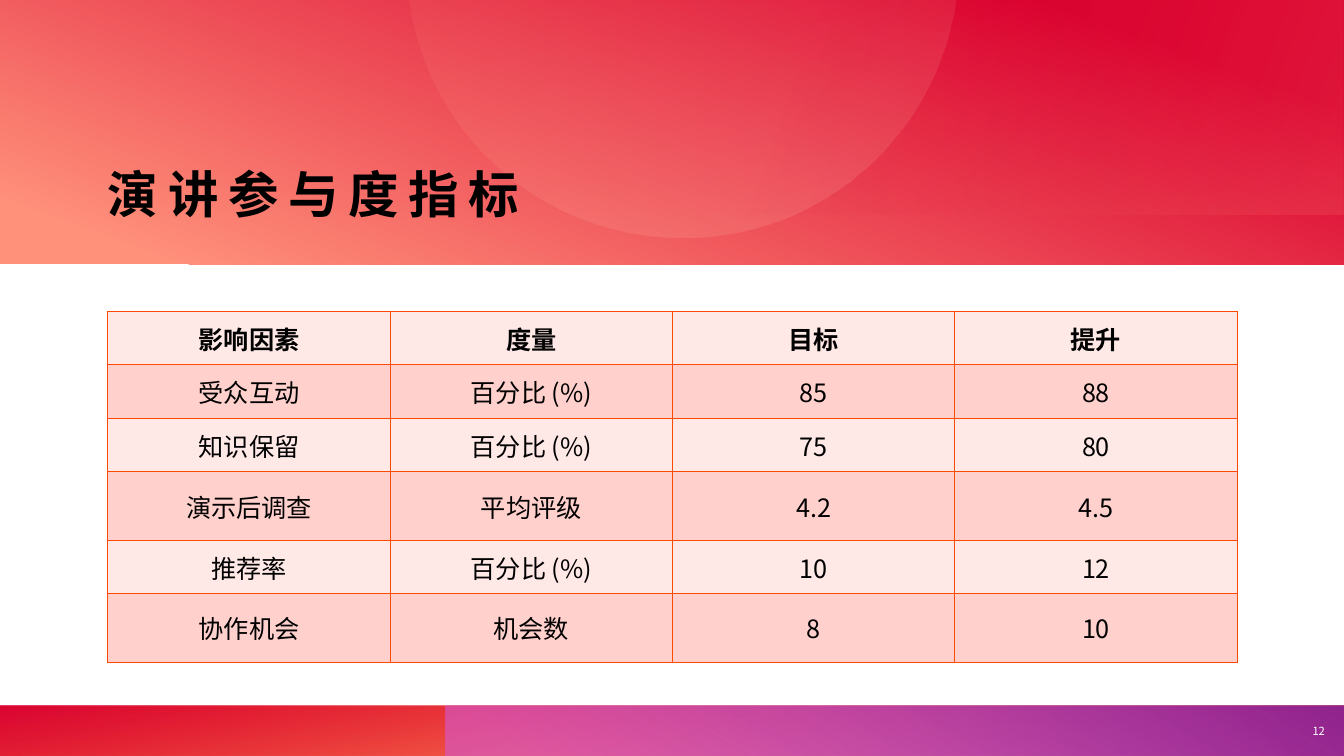
import math
from dataclasses import dataclass

import pptx
import pptx.dml.color
import pptx.enum.shapes
import pptx.enum.text
import pptx.oxml
import pptx.oxml.ns
import pptx.util
from pptx.util import Inches

Align = pptx.enum.text.PP_ALIGN
Anchor = pptx.enum.text.MSO_ANCHOR
Color = pptx.dml.color.RGBColor
qn = pptx.oxml.ns.qn


@dataclass(frozen=True)
class Theme:
    font: str = "Noto Sans CJK SC"
    text: str = "000000"
    white: str = "FFFFFF"
    orange: str = "FE4A00"
    coral: str = "FF907A"
    blush: str = "FFBCAF"
    red: str = "DA002F"
    pink: str = "D861D4"
    purple: str = "92248E"
    row_fills: tuple[str, str] = ("FFE9E7", "FFD0CC")
    title_size: float = 36
    table_size: float = 18
    number_size: float = 8
    title_spacing: float = 7


@dataclass(frozen=True)
class Stop:
    position: int
    color: str
    opacity: int = 100


@dataclass(frozen=True)
class Gradient:
    start: Stop
    end: Stop
    angle: int  # clockwise degrees


@dataclass(frozen=True)
class Band:
    left: float
    top: float
    width: float
    height: float
    gradient: Gradient
    turned: bool = False


THEME = Theme()
WIDTH, HEIGHT = 13.33, 7.5
MARGIN, CONTENT_WIDTH = 1.07, 11.2

RED_FOOTER = Gradient(Stop(14, THEME.orange, 28), Stop(100, THEME.red, 85), 100)
PURPLE_FOOTER = Gradient(Stop(9, THEME.pink, 55), Stop(99, THEME.purple), 240)
HEADER = Gradient(Stop(8, THEME.coral), Stop(86, THEME.red), 70)
DISC = Gradient(Stop(0, THEME.coral, 12), Stop(100, THEME.blush, 20), 77)
GLOW = Gradient(Stop(0, THEME.coral, 16), Stop(62, THEME.red, 0), 340)

FOOTER_BANDS = [
    band
    for top in (7, 7.01)
    for band in (
        Band(0, top, WIDTH, 0.5, RED_FOOTER, turned=True),
        Band(4.42, top, 8.92, 0.5, PURPLE_FOOTER),
    )
]
HEADER_BAND = Band(0, 0, WIDTH, 2.62, HEADER, turned=True)
GLOW_BAND = Band(4.44, 0, 8.88, 2.13, GLOW)

ROWS = [
    ("影响因素", "度量", "目标", "提升"),
    ("受众互动", "百分比 (%)", "85", "88"),
    ("知识保留", "百分比 (%)", "75", "80"),
    ("演示后调查", "平均评级", "4.2", "4.5"),
    ("推荐率", "百分比 (%)", "10", "12"),
    ("协作机会", "机会数", "8", "10"),
]
ROW_HEIGHTS = [0.53, 0.53, 0.53, 0.68, 0.53, 0.68]


def paint_gradient(shape, gradient: Gradient) -> None:
    shape.shadow.inherit = False
    shape.line.fill.background()
    shape.fill.gradient()
    shape.fill.gradient_angle = 360 - gradient.angle
    for target, stop in zip(shape.fill.gradient_stops, (gradient.start, gradient.end)):
        target.position = stop.position / 100
        target.color.rgb = Color.from_string(stop.color)
    colors = shape._element.spPr.iter(qn("a:srgbClr"))
    for color, stop in zip(colors, (gradient.start, gradient.end)):
        alpha = pptx.oxml.parse_xml(
            f'<a:alpha {pptx.oxml.ns.nsdecls("a")} val="{stop.opacity * 1000}"/>'
        )
        color.append(alpha)


def draw_band(page, band: Band) -> None:
    box = page.shapes.add_shape(
        pptx.enum.shapes.MSO_SHAPE.RECTANGLE,
        Inches(band.left), Inches(band.top), Inches(band.width), Inches(band.height),
    )
    paint_gradient(box, band.gradient)
    box._element.spPr.xfrm.set("flipH", "1")
    if band.turned:
        box.rotation = 180


def draw_disc(page) -> None:
    """Draw the part of a circle that hangs below the top edge."""
    center_x, center_y, radius = 6.77, -0.37, 2.73
    edge = math.asin(-center_y / radius)
    steps = 120
    angles = [edge + (math.pi - 2 * edge) * step / steps for step in range(steps + 1)]
    points = [
        (Inches(center_x + radius * math.cos(angle)), Inches(center_y + radius * math.sin(angle)))
        for angle in angles
    ]
    builder = page.shapes.build_freeform(*points[0])
    builder.add_line_segments(points[1:], close=True)
    paint_gradient(builder.convert_to_shape(), DISC)


def write(frame, text: str, size: float, align, anchor, color: str = THEME.text,
          bold: bool = False, spacing: float = 0) -> None:
    frame.text = text
    frame.vertical_anchor = anchor
    para = frame.paragraphs[0]
    para.alignment = align
    font = para.font
    font.name, font.size, font.bold = THEME.font, pptx.util.Pt(size), bold
    font.color.rgb = Color.from_string(color)
    properties = font._element
    properties.find(qn("a:latin")).addnext(pptx.oxml.parse_xml(
        f'<a:ea {pptx.oxml.ns.nsdecls("a")} typeface="{THEME.font}"/>'
    ))
    if spacing:
        properties.set("spc", str(round(spacing * 100)))


def draw_title(page) -> None:
    title = page.shapes.title
    title.left, title.top = Inches(MARGIN), Inches(0.87)
    title.width, title.height = Inches(CONTENT_WIDTH), Inches(1.35)
    frame = title.text_frame
    frame.margin_left = frame.margin_right = frame.margin_top = frame.margin_bottom = 0
    frame.auto_size = pptx.enum.text.MSO_AUTO_SIZE.NONE
    write(frame, "演讲参与度指标", THEME.title_size, Align.LEFT, Anchor.BOTTOM,
          bold=True, spacing=THEME.title_spacing)
    page.shapes._spTree.append(title._element)  # in front of the bands


def add_borders(cell) -> None:
    properties = cell._tc.get_or_add_tcPr()
    for index, side in enumerate(("lnL", "lnR", "lnT", "lnB")):
        properties.insert(index, pptx.oxml.parse_xml(
            f'<a:{side} {pptx.oxml.ns.nsdecls("a")} w="12700"><a:solidFill>'
            f'<a:srgbClr val="{THEME.orange}"/></a:solidFill></a:{side}>'
        ))


def draw_table(page) -> None:
    table = page.shapes.add_table(
        len(ROWS), len(ROWS[0]), Inches(MARGIN), Inches(3.09),
        Inches(CONTENT_WIDTH), Inches(sum(ROW_HEIGHTS)),
    ).table
    for row_index, (texts, height) in enumerate(zip(ROWS, ROW_HEIGHTS)):
        table.rows[row_index].height = Inches(height)
        for column_index, text in enumerate(texts):
            cell = table.cell(row_index, column_index)
            write(cell.text_frame, text, THEME.table_size, Align.CENTER, None,
                  bold=row_index == 0)
            cell.vertical_anchor = Anchor.MIDDLE
            cell.fill.solid()
            cell.fill.fore_color.rgb = Color.from_string(THEME.row_fills[row_index % 2])
            add_borders(cell)


def draw_page_number(page) -> None:
    box = page.shapes.add_textbox(Inches(12.76), Inches(7.01), Inches(0.48), Inches(0.49))
    box.text_frame.word_wrap = True
    write(box.text_frame, "12", THEME.number_size, Align.RIGHT, Anchor.MIDDLE, THEME.white)


def main() -> None:
    deck = pptx.Presentation()
    deck.slide_width, deck.slide_height = Inches(WIDTH), Inches(HEIGHT)
    page = deck.slides.add_slide(deck.slide_layouts.get_by_name("Title Only"))

    # Footer and header bands
    for band in FOOTER_BANDS:
        draw_band(page, band)
    draw_band(page, HEADER_BAND)
    draw_disc(page)
    draw_band(page, GLOW_BAND)

    # Content
    draw_title(page)
    draw_table(page)
    draw_page_number(page)
    deck.save("out.pptx")


if __name__ == "__main__":
    main()
